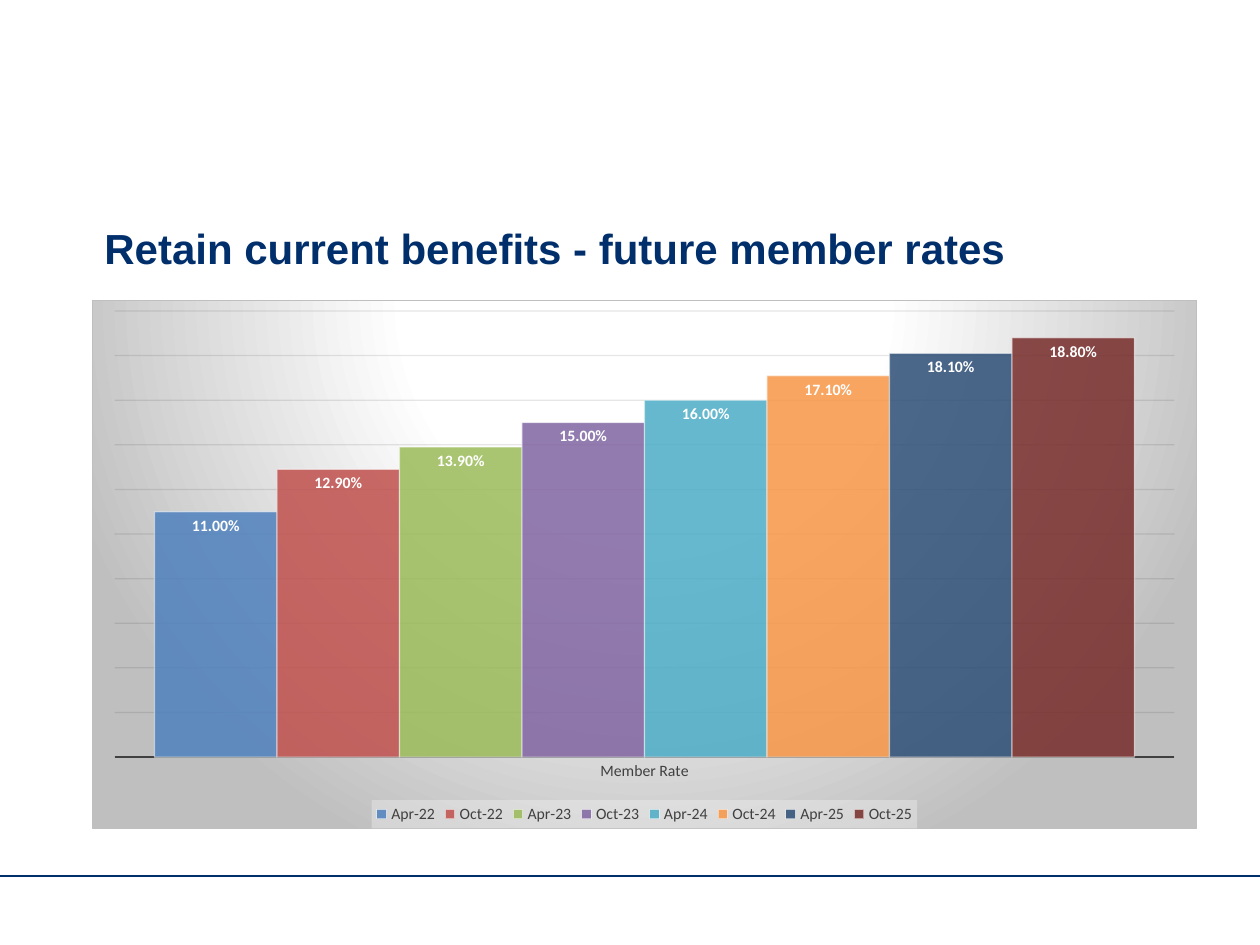
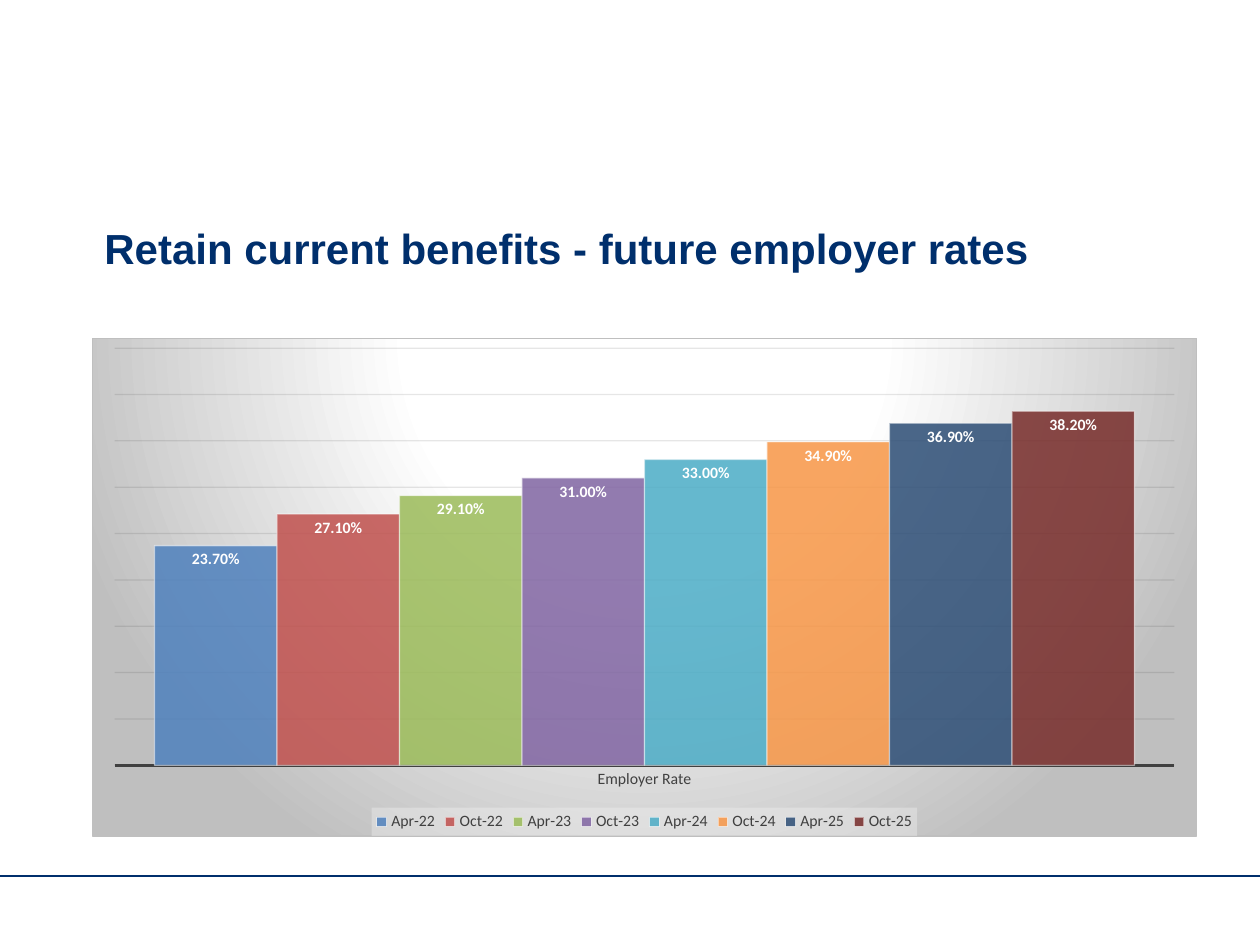
from pptx import Presentation
from pptx.chart.data import CategoryChartData
from pptx.dml.color import RGBColor
from pptx.enum.chart import XL_CHART_TYPE as ChartType
from pptx.enum.chart import XL_LABEL_POSITION as LabelPosition
from pptx.enum.chart import XL_LEGEND_POSITION as LegendPosition
from pptx.enum.chart import XL_TICK_LABEL_POSITION as TickLabels
from pptx.enum.chart import XL_TICK_MARK as TickMark
from pptx.enum.shapes import MSO_CONNECTOR as Connector
from pptx.oxml import parse_xml
from pptx.oxml.ns import nsdecls
from pptx.oxml.xmlchemy import OxmlElement
from pptx.util import Inches, Pt

NAVY = RGBColor(0x00, 0x2F, 0x6C)
WHITE = RGBColor(0xFF, 0xFF, 0xFF)
BLACK = RGBColor(0x00, 0x00, 0x00)
CHARCOAL = RGBColor(0x40, 0x40, 0x40)
GRID = RGBColor(0x0D, 0x0D, 0x0D)
SILVER = RGBColor(0xBF, 0xBF, 0xBF)
MIST = RGBColor(0xF2, 0xF2, 0xF2)

PERIOD_COLOURS = {
    "Apr-22": RGBColor(0x4F, 0x81, 0xBD),
    "Oct-22": RGBColor(0xC0, 0x50, 0x4D),
    "Apr-23": RGBColor(0x9B, 0xBB, 0x59),
    "Oct-23": RGBColor(0x80, 0x64, 0xA2),
    "Apr-24": RGBColor(0x4B, 0xAC, 0xC6),
    "Oct-24": RGBColor(0xF7, 0x96, 0x46),
    "Apr-25": RGBColor(0x2C, 0x4D, 0x75),
    "Oct-25": RGBColor(0x77, 0x2C, 0x2A),
}
MEMBER_RATES = [0.11, 0.129, 0.139, 0.15, 0.16, 0.171, 0.181, 0.188]
EMPLOYER_RATES = [0.237, 0.271, 0.291, 0.31, 0.33, 0.349, 0.369, 0.382]

PERCENT = "0.00%"
SLIDE_WIDTH, SLIDE_HEIGHT = 10, 7.5
CONTENT_LEFT, CONTENT_WIDTH = 0.73, 8.77
TITLE_BOX = (CONTENT_LEFT, 1.72, CONTENT_WIDTH, 0.84)
FOOTER_TOP = 6.95


def style_font(font, size, colour, name="Calibri", bold=False):
    font.name, font.size, font.bold = name, Pt(size), bold
    font.color.rgb = colour


def style_line(line, colour, width):
    line.color.rgb = colour
    line.width = Pt(width)


def set_opacity(element, colour_path, percent):
    for colour in element.xpath(colour_path):
        alpha = OxmlElement("a:alpha")
        alpha.set("val", str(percent * 1000))
        colour.append(alpha)


def add_text(slide, text, box, **font_format):
    frame = slide.shapes.add_textbox(*map(Inches, box)).text_frame
    frame.word_wrap = True
    run = frame.paragraphs[0].add_run()
    run.text = text
    style_font(run.font, **font_format)


def add_footer_rule(slide):
    top = Inches(FOOTER_TOP)
    rule = slide.shapes.add_connector(
        Connector.STRAIGHT, 0, top, Inches(SLIDE_WIDTH), top)
    style_line(rule.line, NAVY, 1)
    rule._element.spPr.append(OxmlElement("a:effectLst"))


def shade_chart_area(chart):
    """Fill the chart area with a glow from the top centre, and frame it."""
    stops = "".join(
        f'<a:gs pos="{position * 1000}"><a:srgbClr val="{colour}"/></a:gs>'
        for position, colour in [(0, WHITE), (39, WHITE), (100, SILVER)])
    area = parse_xml(
        f'<c:spPr {nsdecls("c", "a")}>'
        f'<a:gradFill><a:gsLst>{stops}</a:gsLst><a:path path="circle">'
        '<a:fillToRect l="50000" t="-80000" r="50000" b="180000"/>'
        '</a:path></a:gradFill>'
        f'<a:ln w="{Pt(0.75)}"><a:solidFill><a:srgbClr val="{SILVER}"/>'
        '</a:solidFill></a:ln></c:spPr>')
    chart._chartSpace.xpath("c:chart")[0].addnext(area)


def style_axes(chart, top_rate, rate_step):
    rate_name = chart.category_axis
    rate_name.major_tick_mark = rate_name.minor_tick_mark = TickMark.NONE
    rate_name.tick_label_position = TickLabels.NEXT_TO_AXIS
    style_font(rate_name.tick_labels.font, 9, CHARCOAL)
    style_line(rate_name.format.line, CHARCOAL, 1.5)

    rate = chart.value_axis
    rate.visible = False
    rate.minimum_scale, rate.maximum_scale = 0, top_rate
    rate.major_unit = rate_step
    rate.tick_labels.number_format = PERCENT
    rate.tick_labels.number_format_is_linked = False
    style_line(rate.major_gridlines.format.line, GRID, 0.75)
    set_opacity(rate._element, "c:majorGridlines//a:srgbClr", 10)


def style_columns(plot):
    plot.gap_width = 65
    plot.overlap = 0
    plot.vary_by_categories = False
    for period in plot.series:
        period.format.fill.solid()
        period.format.fill.fore_color.rgb = PERIOD_COLOURS[period.name]
        style_line(period.format.line, WHITE, 0.75)
        set_opacity(period._element, "c:spPr/a:solidFill/a:srgbClr", 85)
        set_opacity(period._element, "c:spPr/a:ln//a:srgbClr", 50)
        labels = period.data_labels
        labels.show_value = True
        labels.position = LabelPosition.INSIDE_END
        labels.number_format = PERCENT
        labels.number_format_is_linked = False
        style_font(labels.font, 9, WHITE, bold=True)


def style_legend(chart):
    chart.has_legend = True
    legend = chart.legend
    legend.position = LegendPosition.BOTTOM
    legend.include_in_layout = False
    style_font(legend.font, 9, CHARCOAL)
    panel = parse_xml(
        f'<c:spPr {nsdecls("c", "a")}><a:solidFill><a:srgbClr val="{MIST}">'
        '<a:alpha val="39000"/></a:srgbClr></a:solidFill></c:spPr>')
    legend._element.xpath("c:txPr")[0].addprevious(panel)


def add_rate_chart(slide, rate_name, rates, box, top_rate, rate_step):
    data = CategoryChartData(number_format=PERCENT)
    data.categories = [rate_name]
    for period, rate in zip(PERIOD_COLOURS, rates):
        data.add_series(period, [rate])
    chart = slide.shapes.add_chart(
        ChartType.COLUMN_CLUSTERED, *map(Inches, box), data).chart
    chart.has_title = False
    style_font(chart.font, 10, BLACK)
    shade_chart_area(chart)
    style_axes(chart, top_rate, rate_step)
    style_columns(chart.plots[0])
    style_legend(chart)


def add_rate_slide(deck, payer, rates, chart_top, chart_height, **scale):
    slide = deck.slides.add_slide(deck.slide_layouts[6])
    slide.background.fill.solid()
    slide.background.fill.fore_color.rgb = WHITE
    add_footer_rule(slide)
    add_text(slide, f"Retain current benefits - future {payer} rates",
             TITLE_BOX, size=24, colour=NAVY, name="Arial", bold=True)
    chart_box = (CONTENT_LEFT, chart_top, CONTENT_WIDTH, chart_height)
    add_rate_chart(slide, f"{payer.title()} Rate", rates, chart_box, **scale)


def main():
    deck = Presentation()
    deck.slide_width = Inches(SLIDE_WIDTH)
    deck.slide_height = Inches(SLIDE_HEIGHT)
    add_rate_slide(deck, "member", MEMBER_RATES, 2.38, 4.2,
                   top_rate=0.2, rate_step=0.02)
    add_rate_slide(deck, "employer", EMPLOYER_RATES, 2.68, 3.96,
                   top_rate=0.45, rate_step=0.05)
    deck.save("out.pptx")


if __name__ == "__main__":
    main()
